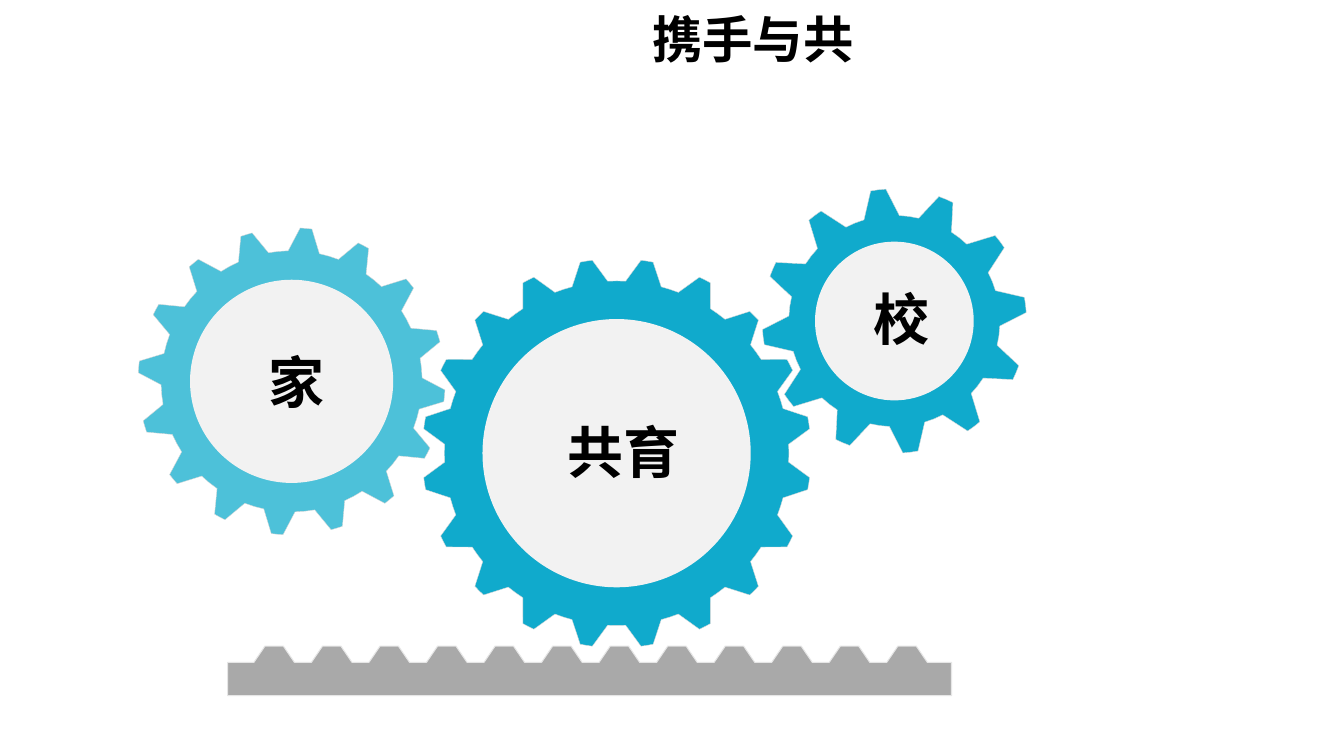
from math import cos, radians, sin

from lxml.etree import SubElement
from pptx import Presentation
from pptx.dml.color import RGBColor
from pptx.enum.shapes import MSO_SHAPE
from pptx.enum.text import MSO_ANCHOR, MSO_AUTO_SIZE, PP_ALIGN
from pptx.oxml.ns import qn
from pptx.util import Cm, Pt

THEME = {
    "font": "Noto Sans CJK SC",
    "text": RGBColor.from_string("000000"),
    "deep": RGBColor.from_string("10AACC"),
    "light": RGBColor.from_string("4DC1D9"),
    "hub": RGBColor.from_string("F2F2F2"),
    "rack": RGBColor.from_string("A9A9A9"),
    "gear_edge": RGBColor.from_string("D7D7D7"),
    "rack_edge": RGBColor.from_string("E6E6E6"),
    "title_size": Pt(36),
    "label_size": Pt(40),
}

prs = Presentation()
prs.slide_width, prs.slide_height = Cm(33.87), Cm(19.05)
s = prs.slides.add_slide(prs.slide_layouts[6])


def add_outline(points, fill, edge, width):
    points = [(Cm(x), Cm(y)) for x, y in points]
    builder = s.shapes.build_freeform(*points[0], scale=1.0)
    builder.add_line_segments(points[1:], close=True)
    sp = builder.convert_to_shape()
    sp.shadow.inherit = False
    sp.fill.solid()
    sp.fill.fore_color.rgb = fill
    sp.line.color.rgb = edge
    sp.line.width = Pt(width)


def add_label(text, box, size, frame_format, line_spacing=None):
    tf = s.shapes.add_textbox(*map(Cm, box)).text_frame
    for name, value in frame_format.items():
        setattr(tf, name, value)
    p = tf.paragraphs[0]
    p.alignment = PP_ALIGN.CENTER
    p.line_spacing = line_spacing
    r = p.add_run()
    r.text = text
    font_format = {"name": THEME["font"], "size": size, "bold": True}
    for name, value in font_format.items():
        setattr(r.font, name, value)
    r.font.color.rgb = THEME["text"]
    SubElement(r.font._element, qn("a:ea"), typeface=THEME["font"])


gears = [
    {"center": (15.54, 11.42), "tip": 4.9, "root": 4.34, "hub": 3.38,
     "teeth": 20, "first": 9, "tip_half": 1.8, "root_half": 6, "fill": "deep"},
    {"center": (22.54, 8.09), "tip": 3.33, "root": 2.66, "hub": 2,
     "teeth": 12, "first": -7, "tip_half": 3.3, "root_half": 9.7, "fill": "deep"},
    {"center": (7.35, 9.61), "tip": 3.87, "root": 3.29, "hub": 2.56,
     "teeth": 16, "first": 5.4, "tip_half": 2.2, "root_half": 6.9, "fill": "light"},
]

for gear in gears:
    cx, cy = gear["center"]
    tip, root, hub = gear["tip"], gear["root"], gear["hub"]
    pitch = 360 / gear["teeth"]
    tooth = [
        (-gear["root_half"], root),
        (-gear["tip_half"], tip),
        (0, tip),
        (gear["tip_half"], tip),
        (gear["root_half"], root),
        (pitch / 2, root),
    ]
    points = []
    for i in range(gear["teeth"]):
        for offset, radius in tooth:
            angle = radians(gear["first"] + i * pitch + offset)
            points.append((cx + radius * sin(angle), cy - radius * cos(angle)))
    add_outline(points, THEME[gear["fill"]], THEME["gear_edge"], 0.25)

    sp = s.shapes.add_shape(
        MSO_SHAPE.OVAL, Cm(cx - hub), Cm(cy - hub), Cm(2 * hub), Cm(2 * hub))
    sp.shadow.inherit = False
    sp.fill.solid()
    sp.fill.fore_color.rgb = THEME["hub"]
    sp.line.fill.background()

left, right, top, base, bottom = 5.74, 23.98, 16.28, 16.69, 17.53
rack = [(left, base)]
for i in range(12):
    x = 6.4 + i * 1.45
    rack += [(x, base), (x + 0.28, top), (x + 0.74, top), (x + 1.02, base)]
rack += [(right, base), (right, bottom), (left, bottom)]
add_outline(rack, THEME["rack"], THEME["rack_edge"], 0.75)

label_frame = {
    "word_wrap": True,
    "auto_size": MSO_AUTO_SIZE.SHAPE_TO_FIT_TEXT,
    "margin_left": Cm(0.33),
    "margin_right": Cm(0.33),
    "margin_top": Cm(0.17),
    "margin_bottom": Cm(0.17),
}
for text, x, y in [("家", 4.27, 8.59), ("共育", 12.52, 10.36), ("校", 19.53, 6.99)]:
    add_label(text, (x, y, 6.4, 2.06), THEME["label_size"], label_frame)

title_frame = {
    "word_wrap": True,
    "vertical_anchor": MSO_ANCHOR.MIDDLE,
    "margin_left": 0,
    "margin_right": 0,
    "margin_top": 0,
    "margin_bottom": 0,
}
add_label("携手与共", (4.37, 0.36, 29.21, 1.4), THEME["title_size"], title_frame, 0.9)

prs.save("out.pptx")
